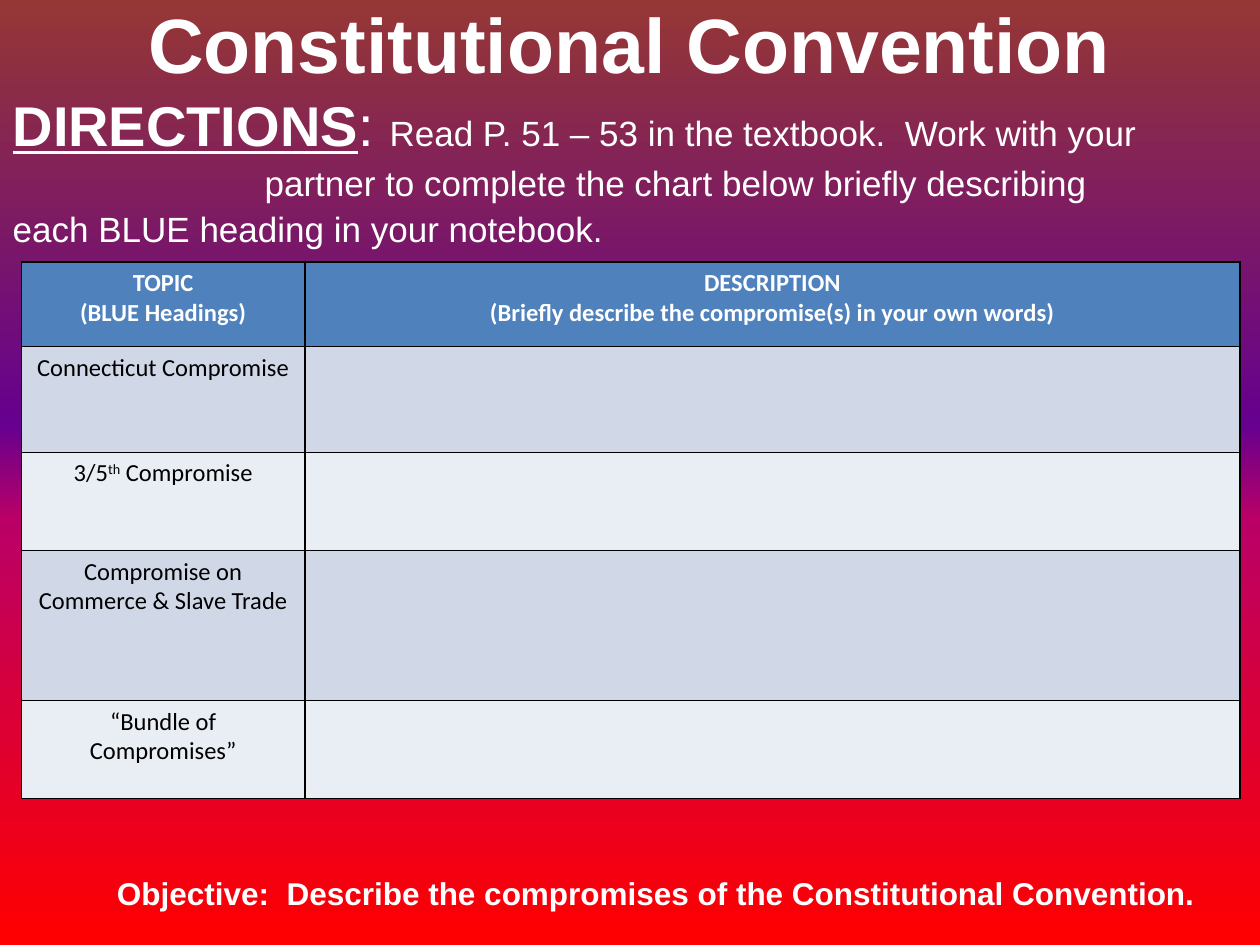
"""Build the Constitutional Convention worksheet slide."""
from lxml import etree
from pptx import Presentation
from pptx.dml.color import RGBColor
from pptx.enum.text import MSO_ANCHOR, MSO_AUTO_SIZE, PP_ALIGN
from pptx.oxml.ns import qn
from pptx.util import Inches, Pt

CENTER, LEFT = PP_ALIGN.CENTER, PP_ALIGN.LEFT
TOP, MIDDLE = MSO_ANCHOR.TOP, MSO_ANCHOR.MIDDLE
NO_FIT = MSO_AUTO_SIZE.NONE

WHITE = RGBColor(0xFF, 0xFF, 0xFF)
BLACK = RGBColor(0x00, 0x00, 0x00)
HEADER_BLUE = RGBColor(0x4F, 0x81, 0xBD)
BANDS = [RGBColor(0xD0, 0xD8, 0xE8), RGBColor(0xE9, 0xED, 0xF4)]
BACKGROUND_STOPS = [
    (0, RGBColor(0x95, 0x37, 0x35)),
    (45, RGBColor(0x66, 0x00, 0x8F)),
    (55, RGBColor(0xBA, 0x00, 0x66)),
    (100, RGBColor(0xFF, 0x00, 0x00)),
]

TITLE = "Constitutional Convention"
DIRECTIONS = [
    (0, [("DIRECTIONS", 32, True), (": ", 32, False),
         ("Read P. 51 – 53 in the textbook.  Work with your", 20, False)]),
    (2, [("partner to complete the chart below briefly describing", 20, False)]),
    (0, [("each BLUE heading in your notebook.", 20, False)]),
]
HEADERS = [
    "TOPIC\n(BLUE Headings)",
    "DESCRIPTION\n(Briefly describe the compromise(s) in your own words)",
]
TOPICS = [
    ["Connecticut Compromise"],
    ["3/5", "th", " Compromise"],
    ["Compromise on Commerce & Slave Trade"],
    ["“Bundle of Compromises”"],
]
OBJECTIVE = "Objective:  Describe the compromises of the Constitutional Convention."
COLUMN_WIDTHS = [2.25, 7.42]
ROW_HEIGHTS = [0.67, 0.84, 0.78, 1.19, 0.78]


def style(span, size, color, name="Arial", bold=False):
    font = span.font
    font.size, font.name, font.bold = Pt(size), name, bold
    font.color.rgb = color


def place(shape, left, top, width, height):
    shape.left, shape.top = Inches(left), Inches(top)
    shape.width, shape.height = Inches(width), Inches(height)


def add_color(parent, color):
    etree.SubElement(parent, qn("a:srgbClr"), val=str(color))


def paint_background(page):
    fill = page.background.fill
    fill.gradient()
    fill.gradient_angle = 270
    stops = page.element.find(".//" + qn("a:gsLst"))
    for stop in list(stops):
        stops.remove(stop)
    for percent, color in BACKGROUND_STOPS:
        add_color(etree.SubElement(stops, qn("a:gs"), pos=str(percent * 1000)), color)


def add_title(page):
    title = page.shapes.title
    place(title, 0, 0, 10, 0.67)
    frame = title.text_frame
    frame.text = TITLE
    frame.auto_size, frame.vertical_anchor = NO_FIT, MIDDLE
    frame.paragraphs[0].alignment = CENTER
    style(frame.paragraphs[0].runs[0], 44, WHITE, bold=True)


def add_directions(page):
    body = page.placeholders[1]
    place(body, 0, 0.67, 10, 6.83)
    frame = body.text_frame
    frame.auto_size, frame.vertical_anchor = NO_FIT, TOP
    for index, (indent, spans) in enumerate(DIRECTIONS):
        para = frame.add_paragraph() if index else frame.paragraphs[0]
        para.alignment = LEFT
        if index:
            para.space_before = Pt(2)
        properties = para._p.get_or_add_pPr()
        properties.set("marL", str(Inches(indent)))
        properties.set("indent", "0")
        etree.SubElement(properties, qn("a:buNone"))
        for text, size, heading in spans:
            span = para.add_run()
            span.text = text
            style(span, size, WHITE, bold=heading)
            span.font.underline = heading


def finish_cell(cell, fill, color, bold):
    properties = cell._tc.get_or_add_tcPr()
    for side in ("lnL", "lnR", "lnT", "lnB"):
        line = etree.SubElement(properties, qn("a:" + side), w=str(Pt(1)))
        add_color(etree.SubElement(line, qn("a:solidFill")), BLACK)
    cell.fill.solid()
    cell.fill.fore_color.rgb = fill
    for para in cell.text_frame.paragraphs:
        para.alignment = CENTER
        for span in para.runs:
            style(span, 14, color, "Calibri", bold)


def add_topic_table(page):
    table = page.shapes.add_table(
        len(ROW_HEIGHTS), len(COLUMN_WIDTHS), Inches(0.17), Inches(2.08),
        Inches(sum(COLUMN_WIDTHS)), Inches(sum(ROW_HEIGHTS))).table
    for column, width in zip(table.columns, COLUMN_WIDTHS):
        column.width = Inches(width)
    for row, height in zip(table.rows, ROW_HEIGHTS):
        row.height = Inches(height)
    for column, header in enumerate(HEADERS):
        cell = table.cell(0, column)
        cell.text_frame.text = header
        finish_cell(cell, HEADER_BLUE, WHITE, True)
    for row, parts in enumerate(TOPICS, start=1):
        para = table.cell(row, 0).text_frame.paragraphs[0]
        for part in parts:
            span = para.add_run()
            span.text = part
            if part == "th":
                span.font._element.set("baseline", "30000")
        for cell in table.rows[row].cells:
            finish_cell(cell, BANDS[(row - 1) % 2], BLACK, False)


def add_objective(page):
    box = page.shapes.add_textbox(Inches(0.83), Inches(6.89), Inches(8.84), Inches(0.4))
    frame = box.text_frame
    frame.text = OBJECTIVE
    frame.word_wrap = False
    style(frame.paragraphs[0].runs[0], 18, WHITE, bold=True)


def main():
    deck = Presentation()
    deck.slide_width, deck.slide_height = Inches(10), Inches(7.5)
    page = deck.slides.add_slide(deck.slide_layouts[1])
    paint_background(page)
    add_title(page)
    add_directions(page)
    add_topic_table(page)
    add_objective(page)
    deck.save("out.pptx")


if __name__ == "__main__":
    main()
